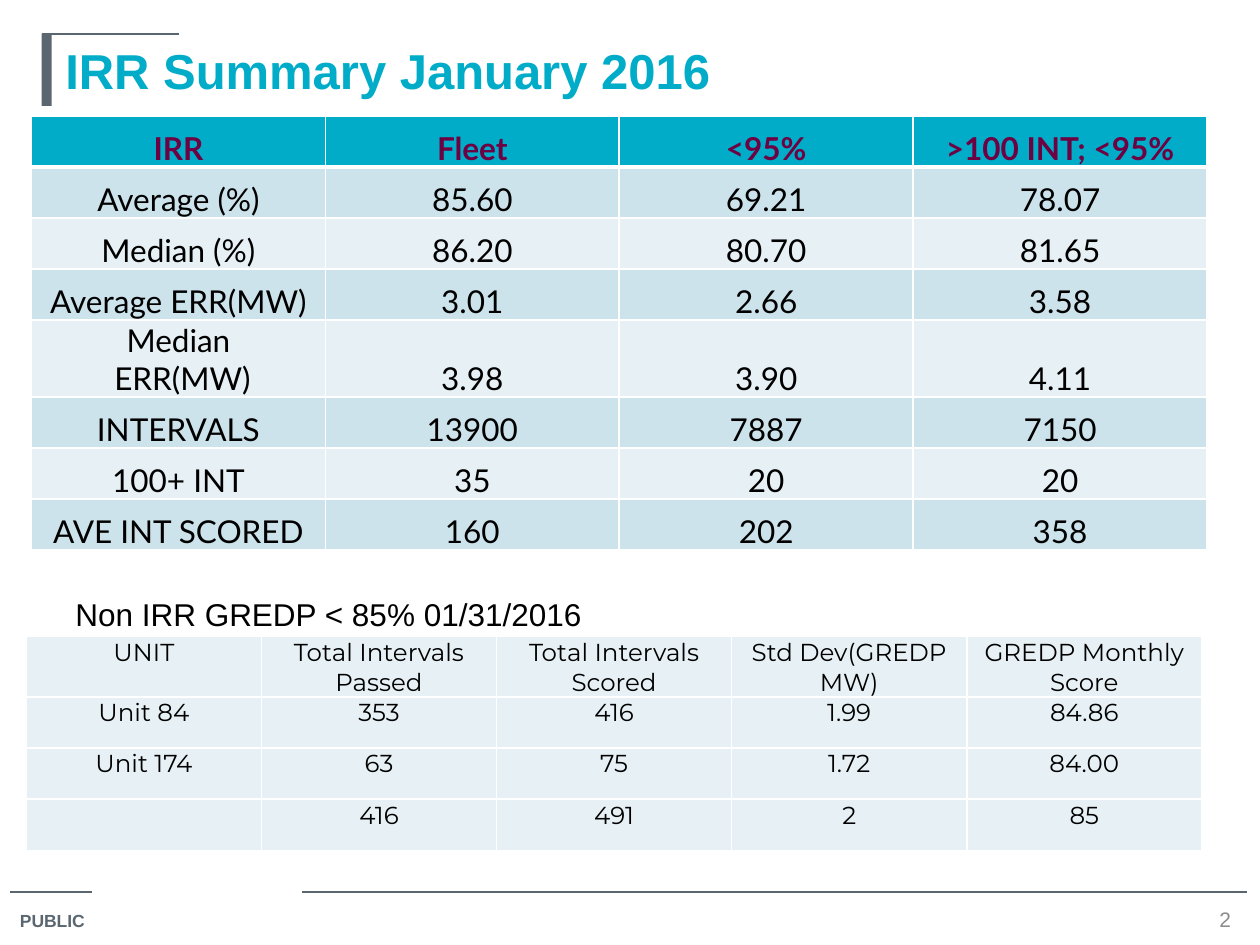
from lxml import etree
from pptx import Presentation
from pptx import util as u
from pptx.dml.color import RGBColor
from pptx.enum import shapes, text
from pptx.oxml.ns import qn

TEAL = RGBColor(0x00, 0xAC, 0xC8)
SLATE = RGBColor(0x5B, 0x67, 0x70)
GRAY = RGBColor(0x8C, 0x8C, 0x8C)
PLUM = RGBColor(0x6D, 0x01, 0x42)
BLACK = RGBColor(0x00, 0x00, 0x00)
WHITE = RGBColor(0xFF, 0xFF, 0xFF)
BAND_DARK = RGBColor(0xCC, 0xE3, 0xEB)
BAND_LIGHT = RGBColor(0xE7, 0xF1, 0xF5)

IRR_ROWS = [
    ["IRR", "Fleet", "<95%", ">100 INT; <95%"],
    ["Average (%)", "85.60", "69.21", "78.07"],
    ["Median (%)", "86.20", "80.70", "81.65"],
    ["Average ERR(MW)", "3.01", "2.66", "3.58"],
    ["Median\n ERR(MW)", "3.98", "3.90", "4.11"],
    ["INTERVALS", "13900", "7887", "7150"],
    ["100+ INT", "35", "20", "20"],
    ["AVE INT SCORED", "160", "202", "358"],
]
UNIT_ROWS = [
    ["UNIT", "Total Intervals Passed", "Total Intervals Scored",
     "Std Dev(GREDP MW)", "GREDP Monthly Score"],
    ["Unit 84", "353", "416", "1.99", "84.86"],
    ["Unit 174", "63", "75", "1.72", "84.00"],
    ["", "416", "491", "2", "85"],
]


def text_format(name, size, color, bold=False):
    return {"name": name, "size": u.Pt(size), "bold": bold, "color": color}


def write_text(frame, wording, font_format, alignment=text.PP_ALIGN.LEFT):
    frame.text = wording
    for paragraph in frame.paragraphs:
        paragraph.alignment = alignment
        for run in paragraph.runs:
            for key, value in font_format.items():
                if key == "color":
                    run.font.color.rgb = value
                else:
                    setattr(run.font, key, value)


def add_label(slide, box, wording, font_format, alignment=text.PP_ALIGN.LEFT,
              anchor=text.MSO_ANCHOR.TOP):
    frame = slide.shapes.add_textbox(*box).text_frame
    frame.word_wrap = True
    frame.vertical_anchor = anchor
    write_text(frame, wording, font_format, alignment)


def add_rule(slide, left, right, top):
    rule = slide.shapes.add_connector(
        shapes.MSO_CONNECTOR.STRAIGHT, left, top, right, top)
    rule.line.color.rgb = SLATE
    rule.line.width = u.Pt(0.75)
    etree.SubElement(rule._element.spPr, qn("a:effectLst"))


def set_borders(cell, bottom_width):
    properties = cell._tc.get_or_add_tcPr()
    for side, width in (("L", 1), ("R", 1), ("T", 1), ("B", bottom_width)):
        border = etree.SubElement(properties, qn(f"a:ln{side}"), w=str(u.Pt(width)))
        fill = etree.SubElement(border, qn("a:solidFill"))
        etree.SubElement(fill, qn("a:srgbClr"), val=str(WHITE))


def add_grid(slide, box, rows, row_heights, anchor, row_style):
    """Draw a table; row_style gives fill, font format and bottom border of a row."""
    table = slide.shapes.add_table(len(rows), len(rows[0]), *box).table
    table.first_row = table.horz_banding = False
    for column in table.columns:
        column.width = box[2] // len(rows[0])
    cell_format = {
        "vertical_anchor": anchor,
        "margin_left": u.Inches(0.01),
        "margin_right": u.Inches(0.01),
        "margin_top": u.Inches(0.01),
        "margin_bottom": 0,
    }
    for index, values in enumerate(rows):
        table.rows[index].height = row_heights[index]
        fill, font_format, bottom_width = row_style(index)
        for cell, value in zip(table.rows[index].cells, values):
            for key, setting in cell_format.items():
                setattr(cell, key, setting)
            set_borders(cell, bottom_width)
            cell.fill.solid()
            cell.fill.fore_color.rgb = fill
            write_text(cell.text_frame, value, font_format, text.PP_ALIGN.CENTER)


def add_title(slide, left, top, width, height):
    # Corner mark: bar and thin rule
    bar = slide.shapes.add_shape(shapes.MSO_SHAPE.RECTANGLE, left, top,
                                 u.Inches(0.08), u.Inches(0.57))
    bar.shadow.inherit = False
    bar.fill.solid()
    bar.fill.fore_color.rgb = SLATE
    bar.line.fill.background()
    add_rule(slide, left, left + u.Inches(1.09), top)
    # Title wording
    indent = u.Inches(0.09)
    add_label(slide, (left + indent, top, width - indent, height),
              "IRR Summary January 2016", text_format("Arial", 28, TEAL, True))


def add_irr_table(slide, left, top, width, height):
    header = (TEAL, text_format("Lato", 18, PLUM, True), 3)
    body = text_format("Lato", 18, BLACK)

    def row_style(index):
        if index == 0:
            return header
        return (BAND_DARK if index % 2 else BAND_LIGHT), body, 1

    count = len(IRR_ROWS)
    add_grid(slide, (left, top, width, height), IRR_ROWS,
             [height // count] * count, text.MSO_ANCHOR.BOTTOM, row_style)


def add_unit_table(slide, left, top, width, height):
    body = text_format("Montserrat", 14, BLACK)
    header_height = u.Inches(0.48)
    body_count = len(UNIT_ROWS) - 1
    heights = [header_height] + [(height - header_height) // body_count] * body_count
    add_grid(slide, (left, top, width, height), UNIT_ROWS, heights,
             text.MSO_ANCHOR.TOP, lambda index: (BAND_LIGHT, body, 1))


def add_footer(slide, left, top, width):
    # Rule with a gap
    add_rule(slide, left, left + u.Inches(0.65), top)
    add_rule(slide, left + u.Inches(2.32), left + width, top)
    # Classification and slide number
    add_label(slide, (left - u.Inches(0.02), top + u.Inches(0.09),
                      u.Inches(0.77), u.Inches(0.28)),
              "PUBLIC", text_format("Arial", 10, SLATE, True))
    add_label(slide, (left + u.Inches(9.5), top + u.Inches(0.1),
                      u.Inches(0.25), u.Inches(0.23)),
              "2", text_format("Arial", 12, GRAY),
              text.PP_ALIGN.CENTER, text.MSO_ANCHOR.MIDDLE)


def main():
    presentation = Presentation()
    presentation.slide_width = u.Inches(10)
    presentation.slide_height = u.Inches(7.5)
    slide = presentation.slides.add_slide(presentation.slide_layouts[6])

    add_footer(slide, u.Inches(0.08), u.Inches(7.08), u.Inches(9.82))
    add_title(slide, u.Inches(0.33), u.Inches(0.27), u.Inches(9.34), u.Inches(0.78))
    add_irr_table(slide, u.Inches(0.25), u.Inches(0.92), u.Inches(9.33), u.Inches(3.24))
    add_label(slide, (u.Inches(0.5), u.Inches(4.67), u.Inches(4.83), u.Inches(0.4)),
              "Non IRR GREDP < 85% 01/31/2016", text_format("Arial", 18, BLACK))
    add_unit_table(slide, u.Inches(0.21), u.Inches(5.05), u.Inches(9.33), u.Inches(1.7))

    presentation.save("out.pptx")


if __name__ == "__main__":
    main()
